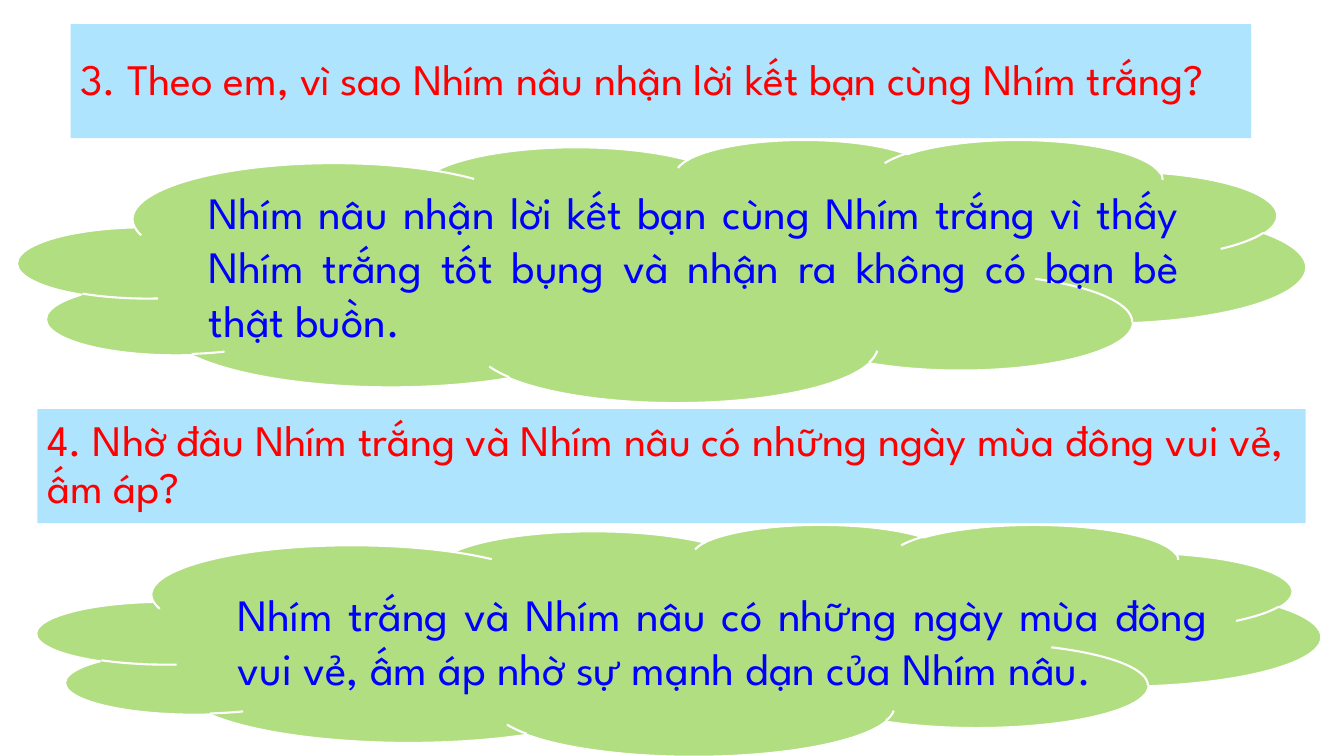
from pptx import Presentation
from pptx.dml.color import RGBColor
from pptx.enum.shapes import MSO_SHAPE
from pptx.enum.text import MSO_ANCHOR, PP_ALIGN
from pptx.util import Pt

RECTANGLE, CLOUD = MSO_SHAPE.RECTANGLE, MSO_SHAPE.CLOUD
MIDDLE = MSO_ANCHOR.MIDDLE
LEFT, JUSTIFY = PP_ALIGN.LEFT, PP_ALIGN.JUSTIFY

EMU_PER_PX = 9144  # 100 px to the inch
FONT = "League Spartan"
COLORS = {
    "background": "FFFFFF",
    "banner": "AFE4FF",
    "cloud": "B2DE82",
    "outline": "FFFFFF",
    "question": "FF0000",
    "answer": "0000FF",
}

# Each entry: question, its banner box, answer, its cloud box, its text box
EXERCISES = [
    ("3. Theo em, vì sao Nhím nâu nhận lời kết bạn cùng Nhím trắng?",
     (70, 24, 1171, 113),
     "Nhím nâu nhận lời kết bạn cùng Nhím trắng vì thấy Nhím trắng tốt bụng "
     "và nhận ra không có bạn bè thật buồn.",
     (18, 138, 1277, 261), (179, 51, 983, 149)),
    ("4. Nhờ đâu Nhím trắng và Nhím nâu có những ngày mùa đông vui vẻ, ấm áp?",
     (37, 406, 1258, 113),
     "Nhím trắng và Nhím nâu có những ngày mùa đông vui vẻ, ấm áp nhờ sự "
     "mạnh dạn của Nhím nâu.",
     (37, 520, 1273, 230), (189, 43, 983, 145)),
]


def px(*lengths):
    return [length * EMU_PER_PX for length in lengths]


def color(name):
    return RGBColor.from_string(COLORS[name])


def write_text(shape, text, *, size, color_name, align=LEFT, line_spacing=1.0):
    frame = shape.text_frame
    frame.word_wrap = True
    frame.vertical_anchor = MIDDLE
    paragraph = frame.paragraphs[0]
    paragraph.text = text
    paragraph.alignment = align
    paragraph.line_spacing = line_spacing
    font = paragraph.font
    font.name = FONT
    font.size = Pt(size)
    font.color.rgb = color(color_name)


def add_filled_shape(shapes, kind, box, fill, outline=None):
    shape = shapes.add_shape(kind, *px(*box))
    shape.shadow.inherit = False
    shape.fill.solid()
    shape.fill.fore_color.rgb = color(fill)
    if outline:
        shape.line.color.rgb = color(outline)
        shape.line.width = Pt(1.5)
    else:
        shape.line.fill.background()
    return shape


def add_question(slide, box, text):
    banner = add_filled_shape(slide.shapes, RECTANGLE, box, "banner")
    write_text(banner, text, size=31.1, color_name="question", line_spacing=0.9)


def add_answer(slide, box, text_box, text):
    """Group a cloud with its text, whose box is measured from the cloud's corner."""
    left, top = box[:2]
    inset_left, inset_top, width, height = text_box
    group = slide.shapes.add_group_shape()
    add_filled_shape(group.shapes, CLOUD, box, "cloud", outline="outline")
    label = group.shapes.add_textbox(
        *px(left + inset_left, top + inset_top, width, height))
    write_text(label, text, size=32, color_name="answer", align=JUSTIFY)


def main():
    presentation = Presentation()
    presentation.slide_width, presentation.slide_height = px(1333, 750)
    slide = presentation.slides.add_slide(presentation.slide_layouts[6])
    slide.background.fill.solid()
    slide.background.fill.fore_color.rgb = color("background")
    for question, banner_box, answer, cloud_box, text_box in EXERCISES:
        add_question(slide, banner_box, question)
        add_answer(slide, cloud_box, text_box, answer)
    presentation.save("out.pptx")


if __name__ == "__main__":
    main()
